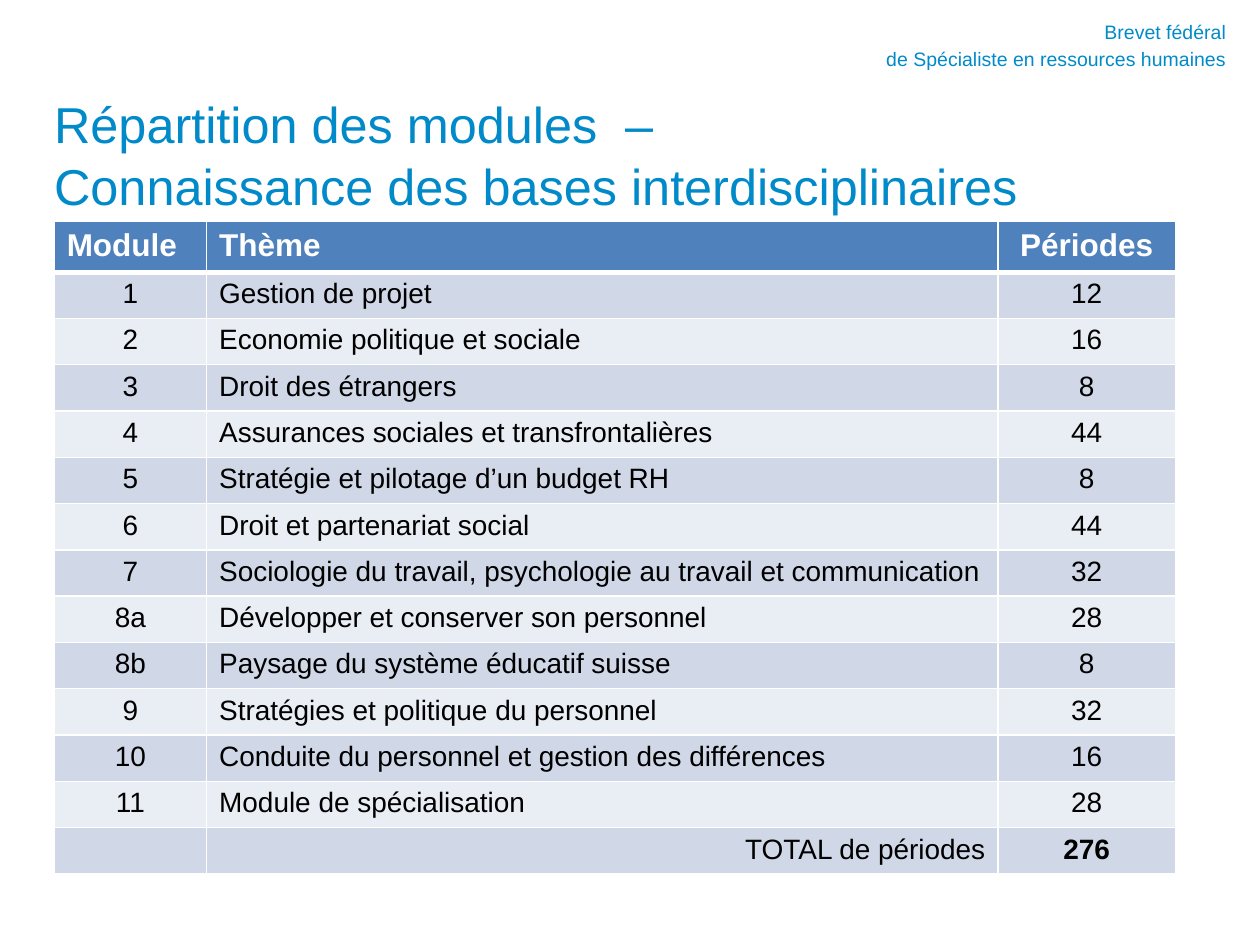
from typing import NamedTuple

import pptx
import pptx.dml.color
import pptx.enum.text
import pptx.oxml.ns
import pptx.util
from lxml import etree
from pptx.util import Inches

FONT = "Arial"
BLUE, WHITE, BLACK = "008AC9", "FFFFFF", "000000"
HEAD_FILL, BANDS = "4F81BD", ("D0D8E8", "E9EDF4")
LEFT = pptx.enum.text.PP_ALIGN.LEFT
CENTER = pptx.enum.text.PP_ALIGN.CENTER
RIGHT = pptx.enum.text.PP_ALIGN.RIGHT


class Label(NamedTuple):
    text: str
    left: float
    top: float
    width: float
    height: float
    size: float
    align: int
    space_before: float
    line_spacing: float


class Module(NamedTuple):
    number: str
    theme: str
    periods: str


LABELS = [
    Label("Répartition des modules  –\vConnaissance des bases interdisciplinaires",
          0.43, 1.07, 9.06, 0.64, 28.8, LEFT, 0, 1.03),
    Label("Brevet fédéral\nde Spécialiste en ressources humaines",
          4.89, 0.18, 4.84, 0.38, 11.1, RIGHT, 2.4, 1.0),
]

HEADER = Module("Module", "Thème", "Périodes")
MODULES = [
    Module("1", "Gestion de projet", "12"),
    Module("2", "Economie politique et sociale", "16"),
    Module("3", "Droit des étrangers", "8"),
    Module("4", "Assurances sociales et transfrontalières", "44"),
    Module("5", "Stratégie et pilotage d’un budget RH", "8"),
    Module("6", "Droit et partenariat social", "44"),
    Module("7", "Sociologie du travail, psychologie au travail et communication", "32"),
    Module("8a", "Développer et conserver son personnel", "28"),
    Module("8b", "Paysage du système éducatif suisse", "8"),
    Module("9", "Stratégies et politique du personnel", "32"),
    Module("10", "Conduite du personnel et gestion des différences", "16"),
    Module("11", "Module de spécialisation", "28"),
]
TOTAL = Module("", "TOTAL de périodes", "276")

TABLE_LEFT, TABLE_TOP, TABLE_HEIGHT = 0.43, 1.76, 5.18
HEAD_HEIGHT = 0.4
COLUMNS = (1.21, 6.28, 1.41)


def rgb(value: str):
    return pptx.dml.color.RGBColor.from_string(value)


def style(p, size: float, color: str, align: int, bold: bool = False) -> None:
    p.alignment = align
    for r in p.runs:
        r.font.name = FONT
        r.font.size = pptx.util.Pt(size)
        r.font.bold = bold
        r.font.color.rgb = rgb(color)


def add_label(s, label: Label) -> None:
    sp = s.shapes.add_textbox(Inches(label.left), Inches(label.top),
                              Inches(label.width), Inches(label.height))
    tf = sp.text_frame
    tf.word_wrap = True
    tf.vertical_anchor = pptx.enum.text.MSO_ANCHOR.BOTTOM
    tf.margin_left = tf.margin_top = tf.margin_right = tf.margin_bottom = 0
    tf.text = label.text
    for p in tf.paragraphs:
        style(p, label.size, BLUE, label.align)
        p.space_before = pptx.util.Pt(label.space_before)
        p.line_spacing = label.line_spacing


def set_borders(cell, top: float, bottom: float) -> None:
    """Draw white borders; the line elements must precede the cell fill."""
    qn = pptx.oxml.ns.qn
    tcPr = cell._tc.get_or_add_tcPr()
    sides = (("a:lnL", 1), ("a:lnR", 1), ("a:lnT", top), ("a:lnB", bottom))
    for i, (tag, width) in enumerate(sides):
        ln = etree.Element(qn(tag), w=str(pptx.util.Pt(width)))
        fill = etree.SubElement(ln, qn("a:solidFill"))
        etree.SubElement(fill, qn("a:srgbClr"), val=WHITE)
        tcPr.insert(i, ln)


def fill_cell(cell, text: str, fill: str, size: float, color: str,
              align: int, bold: bool) -> None:
    cell.fill.solid()
    cell.fill.fore_color.rgb = rgb(fill)
    p = cell.text_frame.paragraphs[0]
    p.text = text
    style(p, size, color, align, bold)
    if not text:  # keep an empty cell from stretching its row
        etree.SubElement(p._p, pptx.oxml.ns.qn("a:endParaRPr"), sz=str(size * 100))


def add_module_table(s) -> None:
    rows = [HEADER, *MODULES, TOTAL]
    last = len(rows) - 1
    table = s.shapes.add_table(len(rows), len(COLUMNS), Inches(TABLE_LEFT),
                               Inches(TABLE_TOP), Inches(sum(COLUMNS)),
                               Inches(TABLE_HEIGHT)).table
    for column, width in zip(table.columns, COLUMNS):
        column.width = Inches(width)
    body_height = (TABLE_HEIGHT - HEAD_HEIGHT) / last

    for i, row in enumerate(rows):
        head, total = i == 0, i == last
        table.rows[i].height = Inches(HEAD_HEIGHT if head else body_height)
        fill = HEAD_FILL if head else BANDS[(i - 1) % 2]
        aligns = (LEFT if head else CENTER, RIGHT if total else LEFT, CENTER)
        for j, text in enumerate(row):
            cell = table.cell(i, j)
            fill_cell(cell, text, fill, 18 if head else 16,
                      WHITE if head else BLACK, aligns[j],
                      head or (total and j == 2))
            set_borders(cell, top=3 if i == 1 else 1, bottom=3 if head else 1)


def main() -> None:
    prs = pptx.Presentation()
    prs.slide_width, prs.slide_height = Inches(10), Inches(7.5)
    s = prs.slides.add_slide(prs.slide_layouts[6])

    # Title and course name
    for label in LABELS:
        add_label(s, label)

    # Modules with their number of periods
    add_module_table(s)

    prs.save("out.pptx")


if __name__ == "__main__":
    main()
